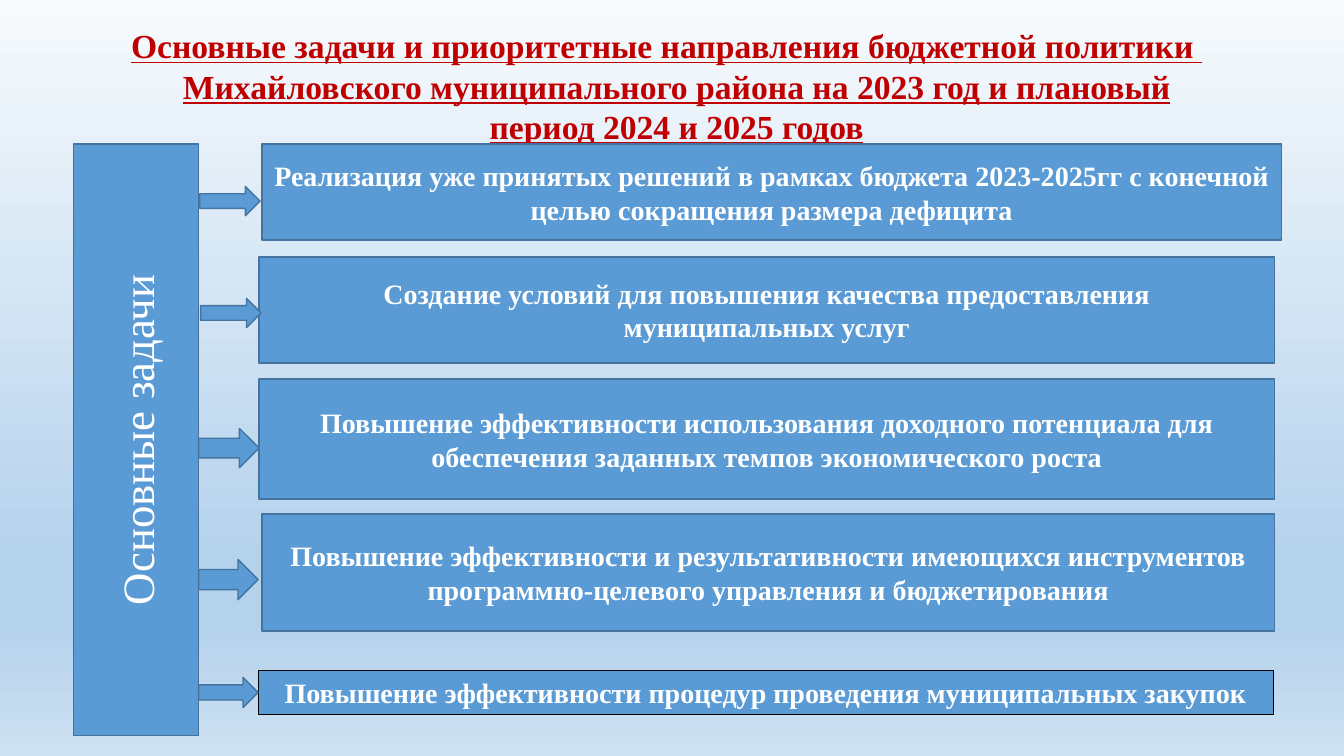
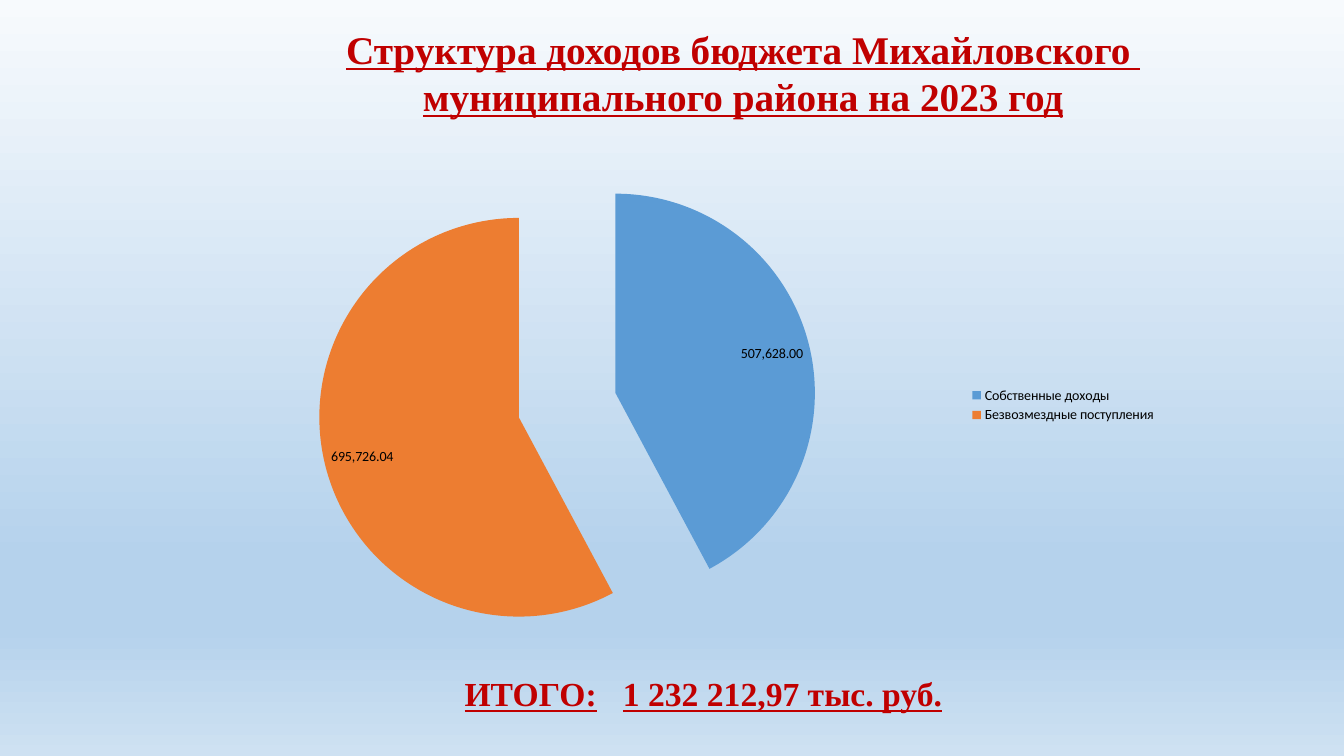
from lxml.etree import SubElement
from pptx import Presentation
from pptx.chart.data import CategoryChartData
from pptx.dml.color import RGBColor
from pptx.enum.chart import XL_CHART_TYPE, XL_LABEL_POSITION, XL_LEGEND_POSITION
from pptx.enum.shapes import MSO_SHAPE
from pptx.enum.text import MSO_ANCHOR, MSO_AUTO_SIZE, PP_ALIGN
from pptx.oxml.ns import qn
from pptx.util import Inches, Pt

# Shared style
SERIF = "Times New Roman"
RED, WHITE, BLACK = "C00000", "FFFFFF", "000000"
BLUE, ORANGE, EDGE = "5B9BD5", "ED7D31", "43739E"
BACKGROUND = [(0, "F7FAFD"), (74, "B5D2EC"), (83, "B5D2EC"), (100, "CEE1F2")]

# Each task: text, box (left, top, width, height), arrow (left, top, width, height)
TASKS = [
    ("Реализация уже принятых решений в рамках бюджета 2023-2025гг "
     "с конечной целью сокращения размера дефицита",
     (2.6, 1.43, 10.11, 0.95), (1.98, 1.85, 0.6, 0.29)),
    ("Создание условий для повышения качества предоставления\nмуниципальных услуг",
     (2.57, 2.55, 10.07, 1.05), (1.99, 2.96, 0.6, 0.29)),
    ("Повышение эффективности использования доходного потенциала "
     "для обеспечения заданных темпов экономического роста",
     (2.57, 3.76, 10.07, 1.19), (1.97, 4.25, 0.6, 0.39)),
    ("Повышение эффективности и результативности имеющихся инструментов "
     "программно-целевого управления и бюджетирования",
     (2.6, 5.1, 10.04, 1.16), (1.97, 5.55, 0.59, 0.4)),
    ("Повышение эффективности процедур проведения муниципальных закупок",
     (2.56, 6.65, 10.07, 0.44), (1.97, 6.72, 0.59, 0.3)),
]


def color(value):
    return RGBColor.from_string(value)


def inches(place):
    return [Inches(length) for length in place]


def format_text(frame, size, tone, bold=True, underline=False, align=PP_ALIGN.CENTER):
    for para in frame.paragraphs:
        para.alignment = align
        for span in para.runs:
            font = span.font
            font.name, font.size = SERIF, Pt(size)
            font.bold, font.underline = bold, underline
            font.color.rgb = color(tone)


def set_background(deck):
    """Give the slide master a vertical gradient."""
    fill = deck.slide_master.background.fill
    fill.gradient()
    fill.gradient_angle = 270
    stops = deck.slide_master.element.find(".//" + qn("a:gsLst"))
    for stop in list(stops):
        stops.remove(stop)
    for percent, tone in BACKGROUND:
        stop = SubElement(stops, qn("a:gs"), pos=str(percent * 1000))
        SubElement(stop, qn("a:srgbClr"), val=tone)


def add_titled_slide(deck, text, place, size, wrap=True):
    slide = deck.slides.add_slide(deck.slide_layouts[5])
    title = slide.shapes.title
    title.left, title.top, title.width, title.height = inches(place)
    frame = title.text_frame
    frame.text = text
    frame.word_wrap = wrap
    frame.auto_size = MSO_AUTO_SIZE.NONE
    frame.vertical_anchor = MSO_ANCHOR.TOP
    format_text(frame, size, RED, underline=True)
    return slide


def add_block(slide, preset, place, edge=EDGE, edge_width=1):
    block = slide.shapes.add_shape(preset, *inches(place))
    block.shadow.inherit = False
    block.fill.solid()
    block.fill.fore_color.rgb = color(BLUE)
    block.line.color.rgb = color(edge)
    block.line.width = Pt(edge_width)
    return block


def add_box(slide, text, place, size=20, bold=True, **edge):
    box = add_block(slide, MSO_SHAPE.RECTANGLE, place, **edge)
    frame = box.text_frame
    frame.text = text
    frame.word_wrap = True
    frame.vertical_anchor = MSO_ANCHOR.MIDDLE
    format_text(frame, size, WHITE, bold)
    return box


def add_total(slide, text, place, tab):
    frame = slide.shapes.add_textbox(*inches(place)).text_frame
    frame.word_wrap = True
    frame.text = text
    format_text(frame, 24, RED, underline=True, align=PP_ALIGN.LEFT)
    tabs = SubElement(frame.paragraphs[0]._p.get_or_add_pPr(), qn("a:tabLst"))
    SubElement(tabs, qn("a:tab"), pos=str(Inches(tab)), algn="l")


def add_pie(slide, place, shares):
    data = CategoryChartData(number_format="#,##0.00")
    data.categories = [name for name, value, tone in shares]
    data.add_series("Series 1", [value for name, value, tone in shares])
    chart = slide.shapes.add_chart(XL_CHART_TYPE.PIE, *inches(place), data).chart
    chart.has_title = False
    chart.font.name, chart.font.size = "Calibri", Pt(10)
    chart.font.color.rgb = color(BLACK)
    chart.has_legend = True
    chart.legend.position = XL_LEGEND_POSITION.RIGHT
    chart.legend.include_in_layout = False

    # Slices
    plot = chart.plots[0]
    plot.vary_by_categories = True
    series = plot.series[0]
    for index, (name, value, tone) in enumerate(shares):
        fill = series.points[index].format.fill
        fill.solid()
        fill.fore_color.rgb = color(tone)
    explosion = SubElement(series._element, qn("c:explosion"), val="25")
    series._element.find(qn("c:dPt")).addprevious(explosion)

    # Labels
    labels = series.data_labels
    labels.show_value = True
    labels.show_percentage = False
    labels.number_format = "#,##0.00"
    labels.number_format_is_linked = False
    labels.position = XL_LABEL_POSITION.INSIDE_END


def add_tasks_slide(deck):
    slide = add_titled_slide(
        deck,
        "Основные задачи и приоритетные направления бюджетной политики \n"
        "Михайловского муниципального района на 2023 год и плановый период 2024 и 2025 годов",
        (1.2, 0.2, 11.02, 1.31), 24)
    slide.shapes.title.text_frame.paragraphs[0].alignment = PP_ALIGN.LEFT
    heading = add_box(slide, "Основные задачи", (0.73, 1.43, 1.24, 5.87), 32, False)
    heading.text_frame._txBody.bodyPr.set("vert", "vert270")
    for text, box_place, arrow_place in TASKS:
        last = text == TASKS[-1][0]
        edge = {"edge": BLACK, "edge_width": 0.75} if last else {}
        add_box(slide, text, box_place, **edge)
        add_block(slide, MSO_SHAPE.RIGHT_ARROW, arrow_place)


def add_income_slide(deck):
    slide = add_titled_slide(
        deck,
        "Структура доходов бюджета Михайловского \nмуниципального района на 2023 год",
        (3.29, 0.2, 8.16, 1.04), 28, wrap=False)
    add_total(slide, "ИТОГО:\t1 232 212,97 тыс. руб.", (4.51, 6.63, 5.36, 0.5), 1.57)
    add_pie(slide, (1.65, 1.41, 9.92, 5.22),
            [("Собственные доходы", 507628, BLUE),
             ("Безвозмездные поступления", 695726.04, ORANGE)])


def main():
    deck = Presentation()
    deck.slide_width, deck.slide_height = Inches(13.33), Inches(7.5)
    set_background(deck)
    add_tasks_slide(deck)
    add_income_slide(deck)
    deck.save("out.pptx")


if __name__ == "__main__":
    main()
